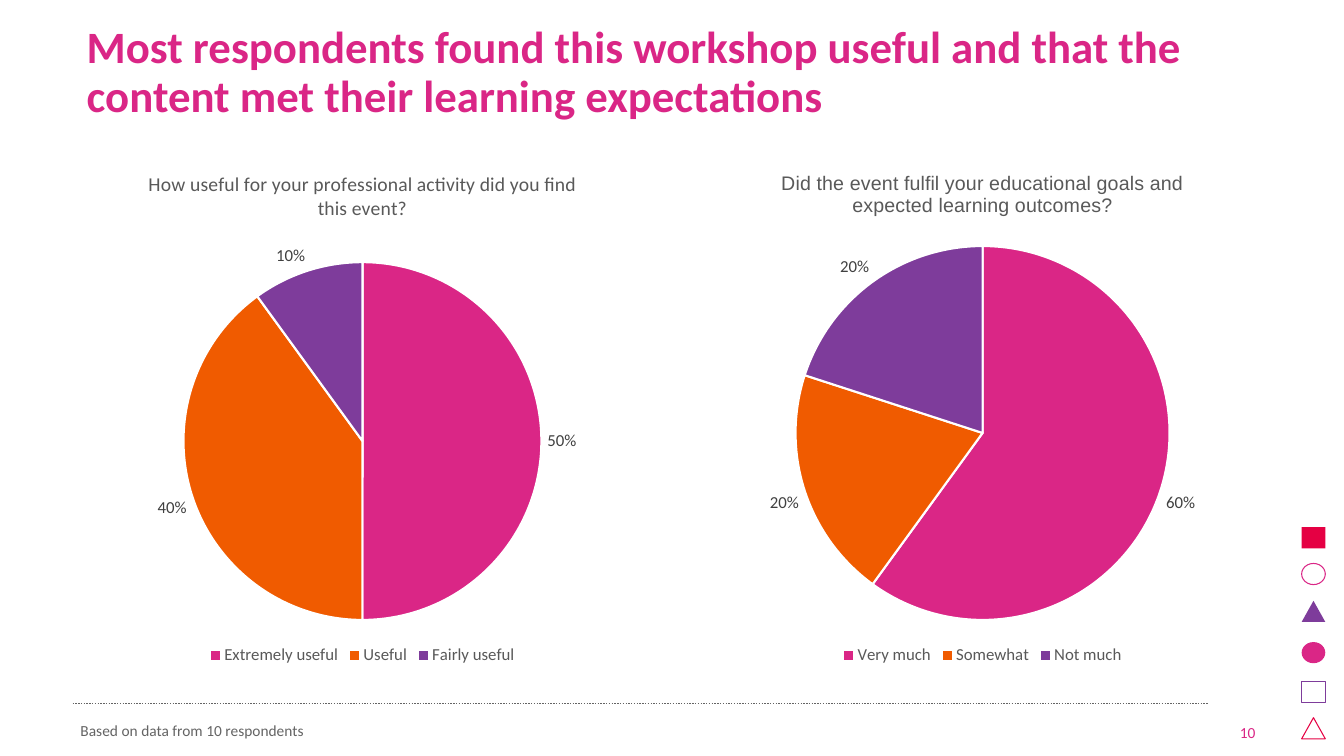
from lxml import etree
from pptx import Presentation
from pptx.chart.data import CategoryChartData
from pptx.dml.color import RGBColor
from pptx.enum.chart import XL_CHART_TYPE, XL_LABEL_POSITION, XL_LEGEND_POSITION
from pptx.enum.dml import MSO_LINE
from pptx.enum.shapes import MSO_CONNECTOR, MSO_SHAPE
from pptx.enum.text import MSO_ANCHOR, PP_ALIGN
from pptx.oxml import parse_xml
from pptx.oxml.ns import nsdecls, qn
from pptx.util import Inches, Pt

PIE = XL_CHART_TYPE.PIE
OUTSIDE_END = XL_LABEL_POSITION.OUTSIDE_END
LEGEND_BOTTOM = XL_LEGEND_POSITION.BOTTOM
DOTTED = MSO_LINE.ROUND_DOT
STRAIGHT = MSO_CONNECTOR.STRAIGHT
SQUARE, CIRCLE, TRIANGLE = MSO_SHAPE.RECTANGLE, MSO_SHAPE.OVAL, MSO_SHAPE.ISOSCELES_TRIANGLE
MIDDLE, BOTTOM = MSO_ANCHOR.MIDDLE, MSO_ANCHOR.BOTTOM
LEFT, RIGHT = PP_ALIGN.LEFT, PP_ALIGN.RIGHT

WIDTH, HEIGHT = Inches(13.33), Inches(7.5)
PINK, ORANGE, PURPLE, RED = "DA2686", "F05B00", "7E3C9B", "E50043"
GREY, CHART_GREY, LABEL_GREY, WHITE = "646464", "595959", "404040", "FFFFFF"
CHART_WIDTH, CHART_HEIGHT = 42.54, 68.53
PIE_BOTTOM = 0.905


def color(value):
    return RGBColor.from_string(value)


class SurveySlide:
    """Draws styled elements on one slide, placed in percent of its width and height."""

    def __init__(self, slide, font="Calibri"):
        self.slide = slide
        self.font = font

    def box(self, left, top, width, height):
        return (int(WIDTH * left / 100), int(HEIGHT * top / 100),
                int(WIDTH * width / 100), int(HEIGHT * height / 100))

    def style(self, font, size, hue, bold=False, name=None):
        font.name = name or self.font
        font.size = Pt(size)
        font.bold = bold
        font.color.rgb = color(hue)

    def set_text(self, shape, text, size, hue, anchor, align=LEFT, bold=False):
        frame = shape.text_frame
        frame.text = text
        frame.word_wrap = True
        frame.vertical_anchor = anchor
        paragraph = frame.paragraphs[0]
        paragraph.alignment = align
        self.style(paragraph.runs[0].font, size, hue, bold)
        return paragraph

    def title(self, text, box):
        shape = self.slide.shapes.title
        shape.left, shape.top, shape.width, shape.height = self.box(*box)
        self.set_text(shape, text, 32, PINK, MIDDLE, bold=True).line_spacing = 0.9

    def note(self, text, box, hue, align=LEFT):
        shape = self.slide.shapes.add_textbox(*self.box(*box))
        self.set_text(shape, text, 11, hue, BOTTOM, align)

    def mark(self, kind, box, hue, filled):
        shape = self.slide.shapes.add_shape(kind, *self.box(*box))
        shape.shadow.inherit = False
        if filled:
            shape.fill.solid()
            shape.fill.fore_color.rgb = color(hue)
            shape.line.fill.background()
        else:
            shape.fill.background()
            shape.line.color.rgb = color(hue)
            shape.line.width = Pt(0.75)

    def rule(self, left, right, top):
        x1, y, x2, _ = self.box(left, top, right, 0)
        line = self.slide.shapes.add_connector(STRAIGHT, x1, y, x2, y)
        line.line.color.rgb = color(GREY)
        line.line.width = Pt(1)
        line.line.dash_style = DOTTED
        etree.SubElement(line._element.spPr, qn("a:effectLst"))

    def pie(self, left, question, answers, diameter, title_font):
        data = CategoryChartData(number_format="0%")
        data.categories = list(answers)
        data.add_series("Series 1", list(answers.values()))
        box = self.box(left, 20, CHART_WIDTH, CHART_HEIGHT)
        chart = self.slide.shapes.add_chart(PIE, *box, data).chart
        self.style(chart.font, 12, CHART_GREY)

        chart.has_title = True
        frame = chart.chart_title.text_frame
        frame.text = question
        self.style(frame.paragraphs[0].runs[0].font, 14, CHART_GREY, name=title_font)
        chart.has_legend = True
        chart.legend.position = LEGEND_BOTTOM
        chart.legend.include_in_layout = False
        self.style(chart.legend.font, 12, CHART_GREY)

        plot = chart.plots[0]
        plot.vary_by_categories = True
        plot.has_data_labels = True
        labels = plot.data_labels
        labels.show_value = True
        labels.show_percentage = False
        labels.number_format = "0%"
        labels.number_format_is_linked = False
        labels.position = OUTSIDE_END
        self.style(labels.font, 12, LABEL_GREY)
        for index, hue in enumerate((PINK, ORANGE, PURPLE)):
            wedge = plot.series[0].points[index].format
            wedge.fill.solid()
            wedge.fill.fore_color.rgb = color(hue)
            wedge.line.color.rgb = color(WHITE)
            wedge.line.width = Pt(1.5)
        self.place_pie(chart, Inches(diameter) / box[2], Inches(diameter) / box[3])

    def place_pie(self, chart, width, height):
        area = chart._chartSpace.chart.plotArea
        for layout in area.findall(qn("c:layout")):
            area.remove(layout)
        places = {"x": (1 - width) / 2, "y": PIE_BOTTOM - height, "w": width, "h": height}
        values = "".join(f'<c:{key} val="{value:.4f}"/>' for key, value in places.items())
        area.insert(0, parse_xml(
            f'<c:layout {nsdecls("c")}><c:manualLayout><c:layoutTarget val="inner"/>'
            f'<c:xMode val="edge"/><c:yMode val="edge"/>{values}'
            '</c:manualLayout></c:layout>'))


def main():
    presentation = Presentation()
    presentation.slide_width, presentation.slide_height = WIDTH, HEIGHT
    survey = SurveySlide(presentation.slides.add_slide(presentation.slide_layouts[5]))

    marks = (
        (SQUARE, 69.73, RED, True),
        (CIRCLE, 74.53, PINK, False),
        (TRIANGLE, 79.47, PURPLE, True),
        (CIRCLE, 84.93, PINK, True),
        (SQUARE, 90.13, PURPLE, False),
        (TRIANGLE, 94.93, RED, False),
    )
    for kind, top, hue, filled in marks:
        survey.mark(kind, (96.85, top, 1.76, 2.8), hue, filled)

    survey.rule(5.4, 89.95, 93.07)
    survey.title("Most respondents found this workshop useful and that the content met "
                 "their learning expectations", (5.7, 2.27, 88.6, 14.93))
    survey.note("Based on data from 10 respondents", (5.25, 92.53, 84.47, 6), GREY)
    survey.note("10", (90.92, 93.47, 3.23, 5.33), PINK, RIGHT)
    survey.pie(5.7, "How useful for your professional activity did you find this event?",
               {"Extremely useful": 0.5, "Useful": 0.4, "Fairly useful": 0.1},
               3.55, "Calibri")
    survey.pie(51.84, "Did the event fulfil your educational goals and expected learning outcomes?",
               {"Very much": 0.6, "Somewhat": 0.2, "Not much": 0.2},
               3.71, "Arial")
    presentation.save("out.pptx")


if __name__ == "__main__":
    main()
